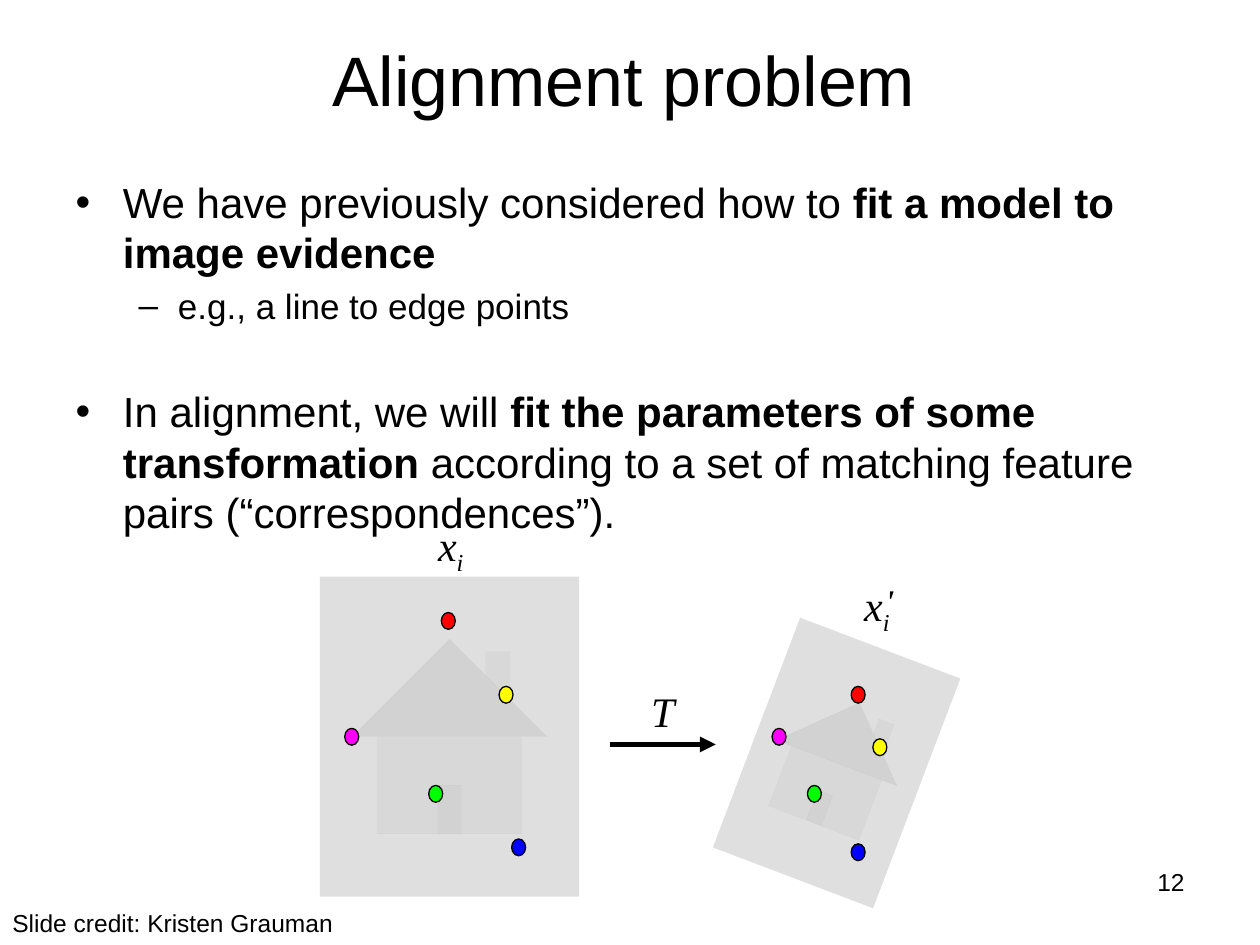
from lxml import etree
from pptx import Presentation
from pptx.dml.color import RGBColor
from pptx.enum.shapes import MSO_CONNECTOR, MSO_SHAPE
from pptx.enum.text import MSO_ANCHOR, MSO_AUTO_SIZE, PP_ALIGN
from pptx.oxml.ns import qn
from pptx.util import Pt

BLACK = RGBColor(0, 0, 0)
GRAY = RGBColor(0x80, 0x80, 0x80)
RED = RGBColor(0xFF, 0, 0)
BLUE = RGBColor(0, 0, 0xFF)
GREEN = RGBColor(0, 0xFF, 0)
MAGENTA = RGBColor(0xFF, 0, 0xFF)
YELLOW = RGBColor(0xFF, 0xFF, 0)

STRAIGHT = MSO_CONNECTOR.STRAIGHT
HOME = MSO_SHAPE.ACTION_BUTTON_HOME
OVAL = MSO_SHAPE.OVAL
LEFT, CENTER, RIGHT = PP_ALIGN.LEFT, PP_ALIGN.CENTER, PP_ALIGN.RIGHT
TOP, MIDDLE = MSO_ANCHOR.TOP, MSO_ANCHOR.MIDDLE
NO_AUTOSIZE = MSO_AUTO_SIZE.NONE

SANS, SERIF = "Arial", "Times New Roman"
MATH = {"name": SERIF, "size": Pt(24), "italic": True}
SMALL = {"name": SANS, "size": Pt(14)}
DOT_W, DOT_H = 8, 9.6

# Left and top of each matching feature point
LEFT_POINTS = [(RED, 252.2, 350), (BLUE, 292.4, 479.4), (GREEN, 245, 448.8),
               (MAGENTA, 197, 416.2), (YELLOW, 285.2, 392.2)]
RIGHT_POINTS = [(RED, 486.4, 392.2), (BLUE, 486.4, 482.2), (GREEN, 461.4, 448.8),
                (MAGENTA, 441.2, 416.2), (YELLOW, 498.8, 422.2)]

# Level, space before, runs as (text, bold)
BULLETS = [
    (0, 4.8, [("We have previously considered how to ", False),
              ("fit a model to image evidence", True)]),
    (1, 4, [("e.g., a line to edge points", False)]),
    (0, 34, [("In alignment, we will ", False),
             ("fit the parameters of some transformation", True),
             (" according to a set of matching feature pairs (“correspondences”).",
              False)]),
]
# Bullet, text size, left margin and hanging indent of each level
LEVELS = [("•", 24, 27, -27), ("–", 20, 58.5, -22.5)]


def add_run(p, text, **font):
    r = p.add_run()
    r.text = text
    r.font.color.rgb = BLACK
    for name, value in font.items():
        setattr(r.font, name, value)
    return r


def place(sp, left, top, width, height):
    sp.left, sp.top, sp.width, sp.height = map(Pt, (left, top, width, height))


def prepare_frame(sp, anchor):
    tf = sp.text_frame
    tf.word_wrap = True
    tf.auto_size = NO_AUTOSIZE
    tf.vertical_anchor = anchor
    return tf


def fill_title(sp, text):
    place(sp, 32.4, 0, 648, 90)
    p = prepare_frame(sp, MIDDLE).paragraphs[0]
    p.alignment = CENTER
    add_run(p, text, name=SANS, size=Pt(40))


def set_bullet(p, char, margin, indent):
    pPr = p._p.get_or_add_pPr()
    pPr.set("marL", str(Pt(margin)))
    pPr.set("indent", str(Pt(indent)))
    etree.SubElement(pPr, qn("a:buFont"), typeface=SANS)
    etree.SubElement(pPr, qn("a:buChar"), char=char)


def fill_body(sp):
    place(sp, 36, 97.2, 648, 230.4)
    tf = prepare_frame(sp, TOP)
    for i, (level, before, runs) in enumerate(BULLETS):
        p = tf.paragraphs[0] if i == 0 else tf.add_paragraph()
        char, size, margin, indent = LEVELS[level]
        p.level = level
        p.space_before = Pt(before)
        set_bullet(p, char, margin, indent)
        for text, bold in runs:
            add_run(p, text, name=SANS, size=Pt(size), bold=bold)


def add_text(shapes, box, text, font, align=LEFT, wrap=False, subscript=None):
    sp = shapes.add_textbox(*map(Pt, box))
    sp.text_frame.word_wrap = wrap
    p = sp.text_frame.paragraphs[0]
    p.alignment = align
    add_run(p, text, **font)
    if subscript:
        r = add_run(p, subscript, **font)
        r._r.get_or_add_rPr().set("baseline", "-25000")


def add_house(shapes, box, rotation=0):
    """Add a translucent picture frame holding a house."""
    sp = shapes.add_shape(HOME, *map(Pt, box))
    sp.rotation = rotation
    sp.shadow.inherit = False
    sp.fill.solid()
    sp.fill.fore_color.rgb = GRAY
    color = sp._element.spPr.find(qn("a:solidFill"))[0]
    etree.SubElement(color, qn("a:alpha"), val="25000")
    sp.line.fill.background()


def add_dot(shapes, color, left, top):
    sp = shapes.add_shape(OVAL, *map(Pt, (left, top, DOT_W, DOT_H)))
    sp.shadow.inherit = False
    sp.fill.solid()
    sp.fill.fore_color.rgb = color
    sp.line.color.rgb = BLACK
    sp.line.width = Pt(0.75)


def add_arrow(shapes, x1, y1, x2, y2):
    line = shapes.add_connector(STRAIGHT, *map(Pt, (x1, y1, x2, y2)))
    line.line.color.rgb = BLACK
    line.line.width = Pt(3)
    etree.SubElement(line.line._get_or_add_ln(), qn("a:tailEnd"), type="triangle")
    etree.SubElement(line._element.spPr, qn("a:effectLst"))


def add_diagram(s):
    shapes = s.shapes.add_group_shape().shapes
    add_arrow(shapes, 348.5, 425.4, 409, 425.4)
    add_house(shapes, (182.8, 329.5, 148.2, 182.8))
    for point in LEFT_POINTS:
        add_dot(shapes, *point)
    add_house(shapes, (429.1, 365.8, 97.9, 140.4), rotation=20.8)
    for point in RIGHT_POINTS:
        add_dot(shapes, *point)


def main():
    prs = Presentation()
    prs.slide_width, prs.slide_height = Pt(720), Pt(540)
    s = prs.slides.add_slide(prs.slide_layouts[1])
    fill_title(s.shapes.title, "Alignment problem")
    fill_body(s.placeholders[1])
    add_diagram(s)
    add_text(s.shapes, (365, 388, 28, 36), "T", MATH)
    add_text(s.shapes, (243.2, 293.2, 29.5, 36), "x", MATH, subscript="i")
    add_text(s.shapes, (486.7, 327.6, 29.5, 36), "x", MATH, subscript="i")
    prime = {**MATH, "size": Pt(18), "bold": True}
    add_text(s.shapes, (499, 328.3, 19.4, 28.8), "'", prime)
    add_text(s.shapes, (516.2, 491.8, 167.8, 37.4), "12", SMALL, RIGHT, wrap=True)
    add_text(s.shapes, (0, 515.5, 252, 24.5), "Slide credit: Kristen Grauman",
             SMALL, wrap=True)
    prs.save("out.pptx")


if __name__ == "__main__":
    main()
